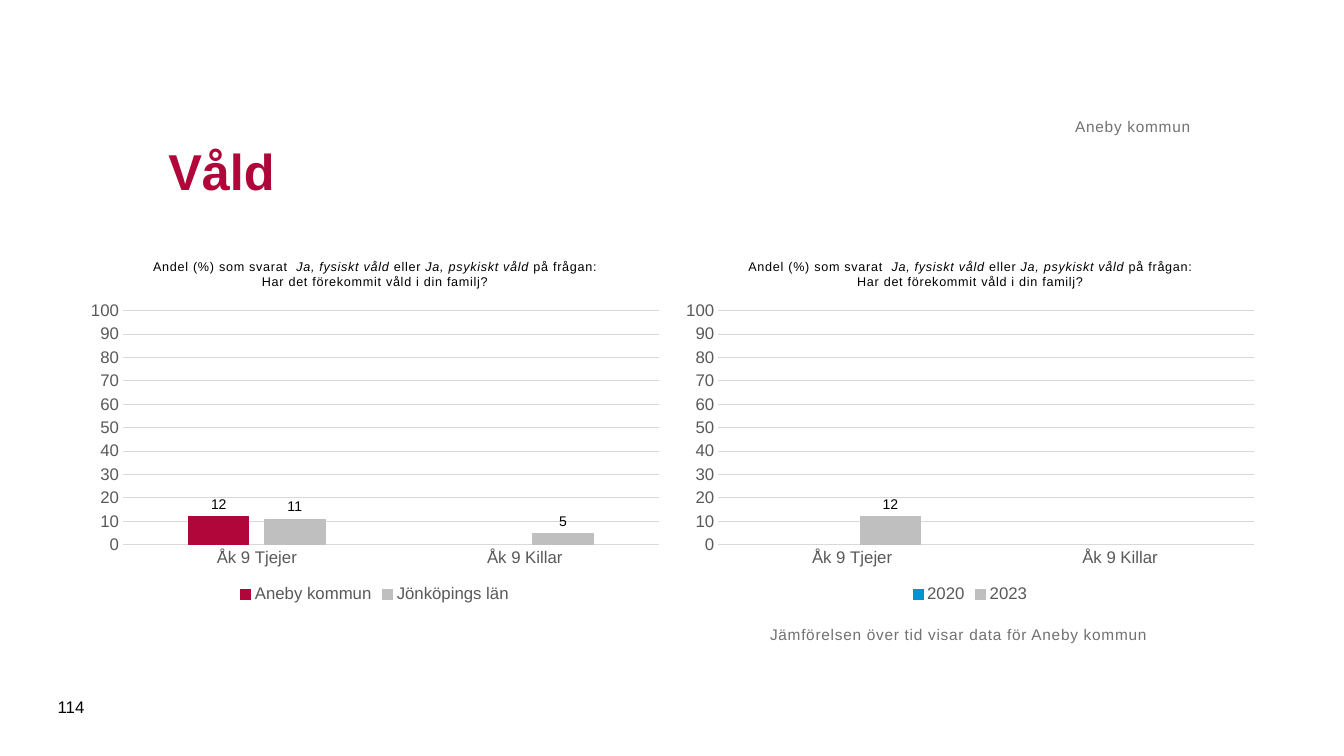
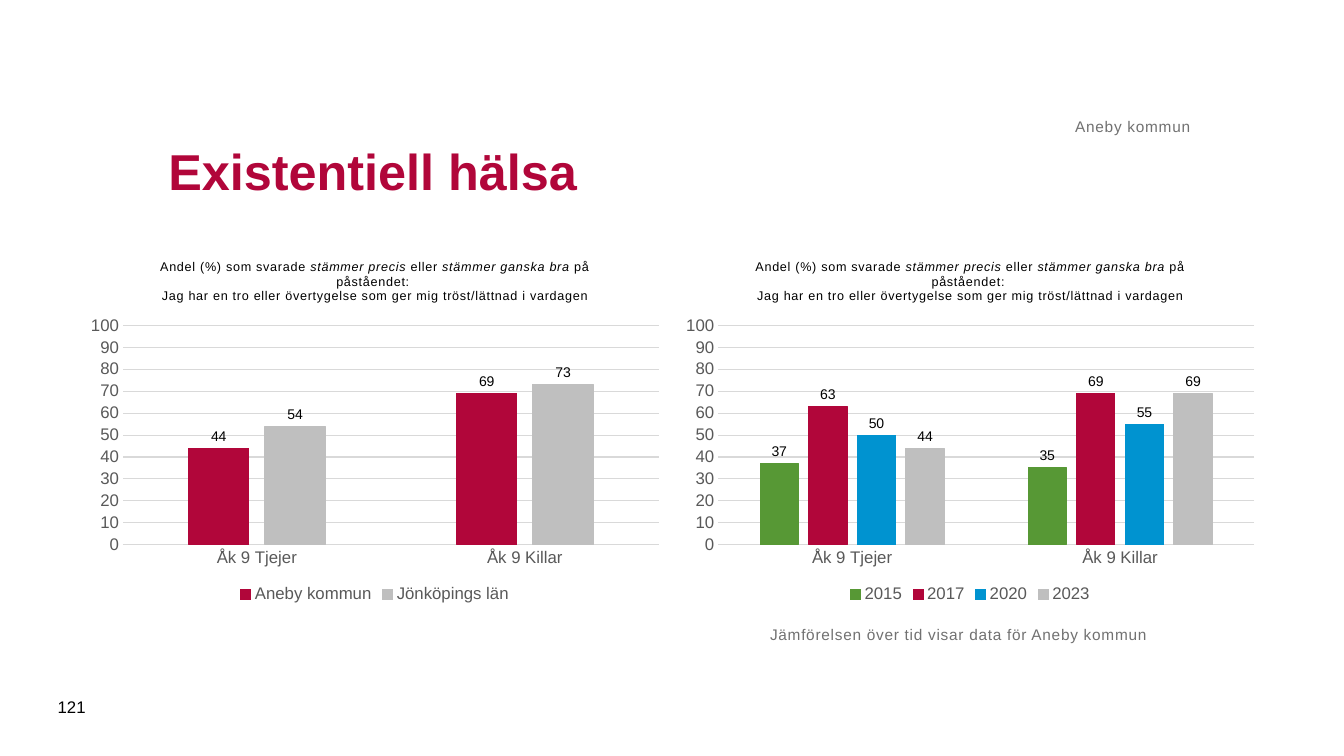
from pptx import Presentation
from pptx.chart.data import CategoryChartData as ChartData
from pptx.dml.color import RGBColor as Rgb
from pptx.enum.chart import XL_CHART_TYPE as Kind
from pptx.enum.chart import XL_LABEL_POSITION as Spot
from pptx.enum.chart import XL_LEGEND_POSITION as Side
from pptx.enum.chart import XL_TICK_MARK as Tick
from pptx.enum.text import MSO_ANCHOR as Anchor
from pptx.enum.text import MSO_AUTO_SIZE as Fit
from pptx.enum.text import PP_ALIGN as Align
from pptx.util import Pt

RED, GREY, BLUE, GREEN = "B1063A", "BFBFBF", "0093D0", "579835"
BLACK, DARK, MID, PALE = "000000", "595959", "717171", "D9D9D9"
TOWN, COUNTY = "Aneby kommun", "Jönköpings län"
TINTS = {TOWN: RED, COUNTY: GREY, "2015": GREEN, "2017": RED,
         "2020": BLUE, "2023": GREY}
GROUPS = ["Åk 9 Tjejer", "Åk 9 Killar"]
FORMAT = "#,##0;#,##0"

PAGES = [
    {
        "title": "Våld",
        "number": "114",
        "head": ["Andel (%) som svarat  *Ja, fysiskt våld* eller "
                 "*Ja, psykiskt våld* på frågan:",
                 "Har det förekommit våld i din familj?"],
        "charts": [{TOWN: [12, None], COUNTY: [11, 5]},
                   {"2020": [None, None], "2023": [12, None]}],
    },
    {
        "title": "Existentiell hälsa",
        "number": "121",
        "head": ["Andel (%) som svarade *stämmer precis* eller "
                 "*stämmer ganska bra* på påståendet: ",
                 "Jag har en tro eller övertygelse som ger mig "
                 "tröst/lättnad i vardagen"],
        "charts": [{TOWN: [44, 69], COUNTY: [54, 73]},
                   {"2015": [37, 35], "2017": [63, 69],
                    "2020": [50, 55], "2023": [44, 69]}],
    },
]


def paint(tint):
    return Rgb.from_string(tint)


def style(font, size, tint=BLACK, bold=False, slant=False):
    font.name = "Arial"
    font.size = Pt(size)
    font.bold = bold
    font.italic = slant
    font.color.rgb = paint(tint)


def write(par, text, size=12, space=0, **look):
    for place, part in enumerate(text.split("*")):
        run = par.add_run()
        run.text = part
        style(run.font, size, slant=place % 2 == 1, **look)
        if space:
            run._r.get_or_add_rPr().set("spc", str(int(space * 100)))


class Deck:
    def __init__(self):
        self.show = Presentation()
        self.show.slide_width = Pt(960)
        self.show.slide_height = Pt(540)
        self.slide = None

    def page(self):
        self.slide = self.show.slides.add_slide(self.show.slide_layouts[5])

    def title(self, text):
        shape = self.slide.shapes.title
        shape.left, shape.top = Pt(113), Pt(70.6)
        shape.width, shape.height = Pt(737.3), Pt(102.2)
        frame = shape.text_frame
        frame.auto_size = Fit.NONE
        frame.vertical_anchor = Anchor.MIDDLE
        par = frame.paragraphs[0]
        par.alignment = Align.LEFT
        write(par, text, size=36, tint=RED, bold=True)

    def text(self, text, box, anchor=Anchor.TOP, align=Align.LEFT,
             inset=True, **look):
        shape = self.slide.shapes.add_textbox(*map(Pt, box))
        frame = shape.text_frame
        frame.word_wrap = True
        frame.vertical_anchor = anchor
        if not inset:
            frame.margin_left = frame.margin_right = Pt(0)
            frame.margin_top = frame.margin_bottom = Pt(0)
        par = frame.paragraphs[0]
        par.alignment = align
        write(par, text, **look)

    def label(self, text, box, **place):
        self.text(text, box, inset=False, size=11, tint=MID, space=0.5,
                  **place)

    def chart(self, head, rows, left):
        data = ChartData(number_format=FORMAT)
        data.categories = GROUPS
        for name, vals in rows.items():
            data.add_series(name, vals)
        box = map(Pt, (left, 173.1, 422.6, 260.6))
        chart = self.slide.shapes.add_chart(
            Kind.COLUMN_CLUSTERED, *box, data).chart
        style(chart.font, 10)
        self.head(chart, head)
        self.axes(chart)
        self.bars(chart.plots[0])
        chart.has_legend = True
        chart.legend.position = Side.BOTTOM
        chart.legend.include_in_layout = False
        style(chart.legend.font, 12, DARK)

    def head(self, chart, lines):
        chart.has_title = True
        chart.chart_title.include_in_layout = False
        frame = chart.chart_title.text_frame
        for place, line in enumerate(lines):
            par = frame.add_paragraph() if place else frame.paragraphs[0]
            write(par, line, size=9, space=0.5)

    def axes(self, chart):
        base, scale = chart.category_axis, chart.value_axis
        for axis in (base, scale):
            axis.major_tick_mark = axis.minor_tick_mark = Tick.NONE
            style(axis.tick_labels.font, 12, DARK)
        scale.minimum_scale, scale.maximum_scale = 0, 100
        scale.major_unit = 10
        scale.tick_labels.number_format = FORMAT
        scale.tick_labels.number_format_is_linked = False
        scale.format.line.fill.background()
        scale.has_major_gridlines = True
        for item in (base, scale.major_gridlines):
            item.format.line.color.rgb = paint(PALE)
            item.format.line.width = Pt(0.75)

    def bars(self, plot):
        plot.gap_width, plot.overlap = 219, -27
        plot.vary_by_categories = False
        for row in plot.series:
            tint = paint(TINTS[row.name])
            row.format.fill.solid()
            row.format.fill.fore_color.rgb = tint
            row.format.line.color.rgb = tint
            row.format.line.width = Pt(0.75)
            labels = row.data_labels
            labels.show_value = True
            labels.position = Spot.OUTSIDE_END
            labels.number_format = FORMAT
            labels.number_format_is_linked = False
            style(labels.font, 10)


def main():
    deck = Deck()
    for page in PAGES:
        deck.page()
        for place, rows in enumerate(page["charts"]):
            deck.chart(page["head"], rows, 56.5 + place * 425.2)
        deck.title(page["title"])
        deck.label("Jämförelsen över tid visar data för Aneby kommun",
                   (550, 446.4, 382.3, 67.7))
        deck.label(TOWN, (113, 44.6, 737.3, 52.6),
                   anchor=Anchor.BOTTOM, align=Align.RIGHT)
        deck.text(page["number"], (34.1, 490.3, 41, 28.8),
                  anchor=Anchor.MIDDLE)
    deck.show.save("out.pptx")


if __name__ == "__main__":
    main()
